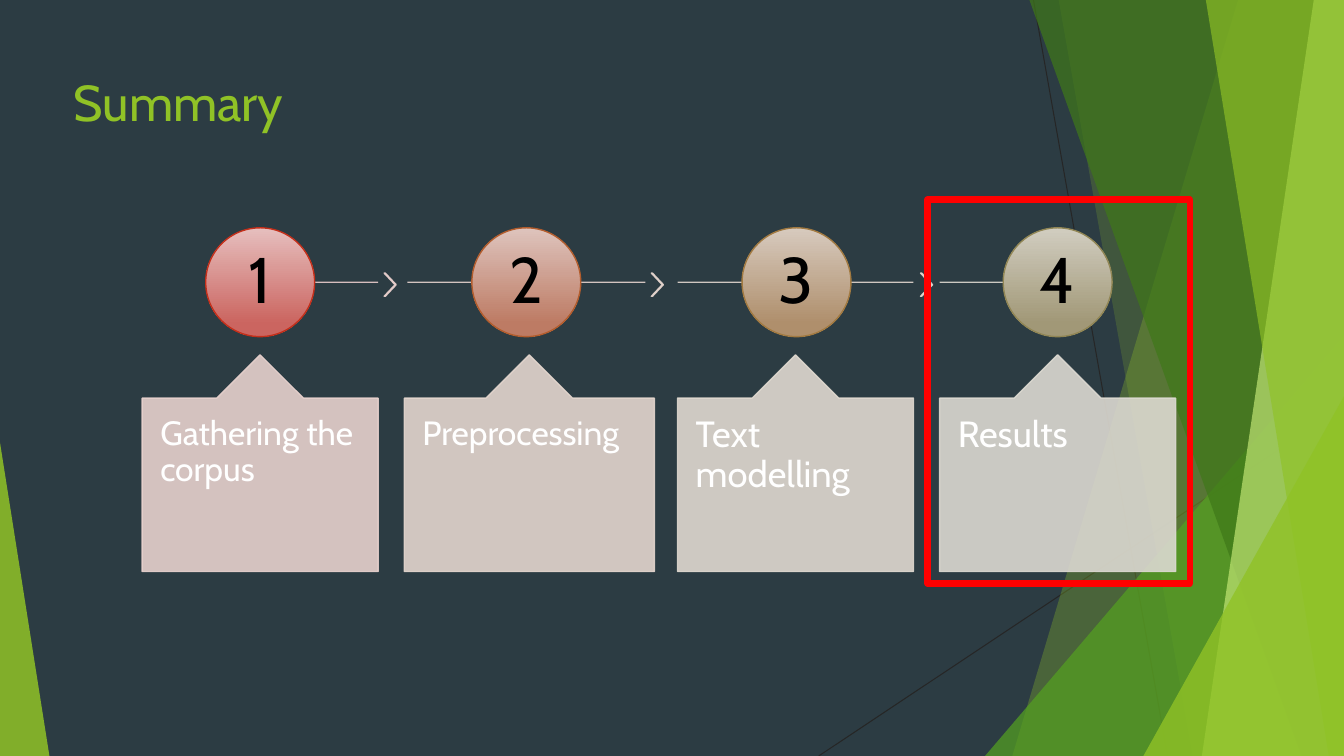
"""Build the Summary slide: four numbered process steps, the last one framed."""
from dataclasses import dataclass

from lxml import etree
from pptx import Presentation
from pptx.dml.color import RGBColor
from pptx.enum.shapes import MSO_CONNECTOR, MSO_SHAPE
from pptx.enum.text import MSO_ANCHOR, MSO_AUTO_SIZE, PP_ALIGN
from pptx.oxml.ns import qn
from pptx.util import Inches, Pt

STRAIGHT = MSO_CONNECTOR.STRAIGHT
RECT, OVAL, CHEVRON = MSO_SHAPE.RECTANGLE, MSO_SHAPE.OVAL, MSO_SHAPE.CHEVRON
TRIANGLE, CALLOUT = MSO_SHAPE.ISOSCELES_TRIANGLE, MSO_SHAPE.UP_ARROW_CALLOUT
LEFT, CENTER = PP_ALIGN.LEFT, PP_ALIGN.CENTER
TOP, MIDDLE = MSO_ANCHOR.TOP, MSO_ANCHOR.MIDDLE
NO_AUTOSIZE = MSO_AUTO_SIZE.NONE

FONT = "Cabin"
GREEN = "90C226"
WIDTH, HEIGHT = 13.33, 7.5
CIRCLE = 1.08
STEP_OPACITY = 90


@dataclass
class Facet:
    points: list[tuple[float, float]]
    color: str
    opacity: int


@dataclass
class Wedge:
    left: float
    top: float
    width: float
    apex: float
    color: str
    opacity: int


@dataclass
class Step:
    text: str
    size: int
    circle_left: float
    box_left: float
    box_width: float
    line: tuple[float, float]
    line_color: str
    box_color: str
    gradient: tuple[str, str]
    outline: str
    chevron_left: float = 0
    chevron_color: str = ""


def band(top: float, bottom: float, color: str, opacity: int) -> Facet:
    """Describe a facet from a slanted left edge to the right slide edge."""
    points = [(top, 0), (WIDTH, 0), (WIDTH, HEIGHT), (bottom, HEIGHT)]
    return Facet(points, color, opacity)


RAYS = [(10.25, 0, 11.58, HEIGHT), (WIDTH, 4.03, 8.12, HEIGHT)]
DECOR = [
    band(12.28, 10.04, GREEN, 30),
    band(10.5, 11.83, GREEN, 20),
    Wedge(9.77, 3.33, 3.56, 1, "54A021", 72),
    band(10.21, 12.91, "3F7819", 70),
    band(13.03, 11.92, "C0E474", 70),
    band(11.96, 13.18, GREEN, 65),
    Wedge(11.34, 3.93, 1.99, 1, GREEN, 80),
    Wedge(0, 4.39, 0.49, 0, GREEN, 85),
]
STEPS = [
    Step("Gathering the corpus", 24, 2.04, 1.41, 2.34, (2.71, 3.75), "EACDCD",
         "E7D1CD", ("E6BFBE", "CB6560"), "C42F1A", 3.81, "E9D0CD"),
    Step("Preprocessing", 24, 4.68, 4.01, 2.48, (4.04, 6.4), "E6D3CE",
         "E4D6CE", ("DEC4BD", "BD7B64"), "B35D2D", 6.46, "E5D5CE"),
    Step("Text modelling", 26, 7.36, 6.72, 2.34, (6.72, 9.06), "E2D7CF",
         "E0D9D0", ("D7CABE", "AF8F6C"), "A27A41", 9.13, "E1D8CF"),
    Step("Results", 26, 9.95, 9.32, 2.34, (9.32, 10.49), "DED9D0",
         "DCD9D1", ("D1CDC0", "A19877"), "918655"),
]


def rgb(color: str) -> RGBColor:
    """Turn a hex string into a colour."""
    return RGBColor.from_string(color)


def set_opacity(shape, percent: int) -> None:
    """Give every colour of a shape the same opacity."""
    for clr in shape._element.spPr.iter(qn("a:srgbClr")):
        etree.SubElement(clr, qn("a:alpha")).set("val", str(percent * 1000))


def paint(shape, fill: str = "", line: str = "", weight: float = 1) -> None:
    """Set the fill and outline of a shape, or leave them off."""
    shape.shadow.inherit = False
    if fill:
        shape.fill.solid()
        shape.fill.fore_color.rgb = rgb(fill)
    else:
        shape.fill.background()
    if line:
        shape.line.color.rgb = rgb(line)
        shape.line.width = Pt(weight)
    else:
        shape.line.fill.background()


def add_shape(s, kind, left: float, top: float, width: float, height: float,
              adjustments: tuple[float, ...] = ()):
    """Add a preset shape measured in inches."""
    shape = s.shapes.add_shape(kind, *map(Inches, (left, top, width, height)))
    for i, value in enumerate(adjustments):
        shape.adjustments[i] = value
    return shape


def add_line(s, x1: float, y1: float, x2: float, y2: float, color: str, weight: float):
    """Add a straight line without a shadow."""
    line = s.shapes.add_connector(STRAIGHT, *map(Inches, (x1, y1, x2, y2)))
    line.line.color.rgb = rgb(color)
    line.line.width = Pt(weight)
    etree.SubElement(line._element.spPr, qn("a:effectLst"))
    return line


def write(shape, text: str, size: int, color: str, align, anchor,
          inset: tuple[float, float], spacing: float) -> None:
    """Write one formatted paragraph into a shape."""
    tf, (side, edge) = shape.text_frame, map(Inches, inset)
    p = tf.paragraphs[0]
    r = p.add_run()
    r.text = text
    formats = {
        tf: {"word_wrap": True, "auto_size": NO_AUTOSIZE, "vertical_anchor": anchor,
             "margin_left": side, "margin_right": side,
             "margin_top": edge, "margin_bottom": edge},
        p: {"alignment": align, "line_spacing": spacing},
        r.font: {"name": FONT, "size": Pt(size)},
        r.font.color: {"rgb": rgb(color)},
    }
    for target, values in formats.items():
        for name, value in values.items():
            setattr(target, name, value)


def add_decor(s, item: Facet | Wedge) -> None:
    """Draw one translucent piece of the background."""
    if isinstance(item, Facet):
        points = [(Inches(x), Inches(y)) for x, y in item.points]
        builder = s.shapes.build_freeform(*points[0])
        builder.add_line_segments(points[1:], close=True)
        shape = builder.convert_to_shape()
    else:
        shape = add_shape(s, TRIANGLE, item.left, item.top, item.width,
                          HEIGHT - item.top, (item.apex,))
    paint(shape, item.color)
    set_opacity(shape, item.opacity)


def add_step(s, number: int, step: Step) -> None:
    """Draw the line, chevron, numbered circle and callout of a step."""
    start, end = step.line
    set_opacity(add_line(s, start, 2.8, end, 2.8, step.line_color, 1), STEP_OPACITY)
    if step.chevron_color:
        chevron = add_shape(s, CHEVRON, step.chevron_left, 2.71, 0.12, 0.23, (0.9,))
        paint(chevron, step.chevron_color, step.chevron_color)
        set_opacity(chevron, STEP_OPACITY)

    circle = add_shape(s, OVAL, step.circle_left, 2.26, CIRCLE, CIRCLE)
    paint(circle, line=step.outline)
    circle.fill.gradient()
    circle.fill.gradient_angle = 270
    for stop, position, color in zip(circle.fill.gradient_stops, (0, 0.88), step.gradient):
        stop.position = position
        stop.color.rgb = rgb(color)
    write(circle, str(number), 46, "000000", CENTER, MIDDLE, (0.04, 0.04), 0.9)

    box = add_shape(s, CALLOUT, step.box_left, 3.52, step.box_width, 2.15,
                    (0.4, 0.2, 0.2, 0.8))
    paint(box, step.box_color, step.box_color)
    set_opacity(box, STEP_OPACITY)
    write(box, step.text, step.size, "FFFFFF", LEFT, TOP, (0.18, 0.18), 0.9)


def main() -> None:
    """Build and save the slide."""
    prs = Presentation()
    prs.slide_width, prs.slide_height = Inches(WIDTH), Inches(HEIGHT)
    s = prs.slides.add_slide(prs.slide_layouts[5])
    s.background.fill.solid()
    s.background.fill.fore_color.rgb = rgb("2C3C43")

    for ray in RAYS:
        add_line(s, *ray, "262626", 0.75)
    for item in DECOR:
        add_decor(s, item)
    for number, step in enumerate(STEPS, 1):
        add_step(s, number, step)
    paint(add_shape(s, RECT, 9.2, 1.98, 2.6, 3.81), line="FF0000", weight=4.5)

    title = s.shapes.title
    title.left, title.top, title.width, title.height = map(Inches, (0.63, 0.66, 11.5, 0.9))
    write(title, "Summary", 36, GREEN, LEFT, TOP, (0.1, 0.05), 1.0)
    prs.save("out.pptx")


if __name__ == "__main__":
    main()
